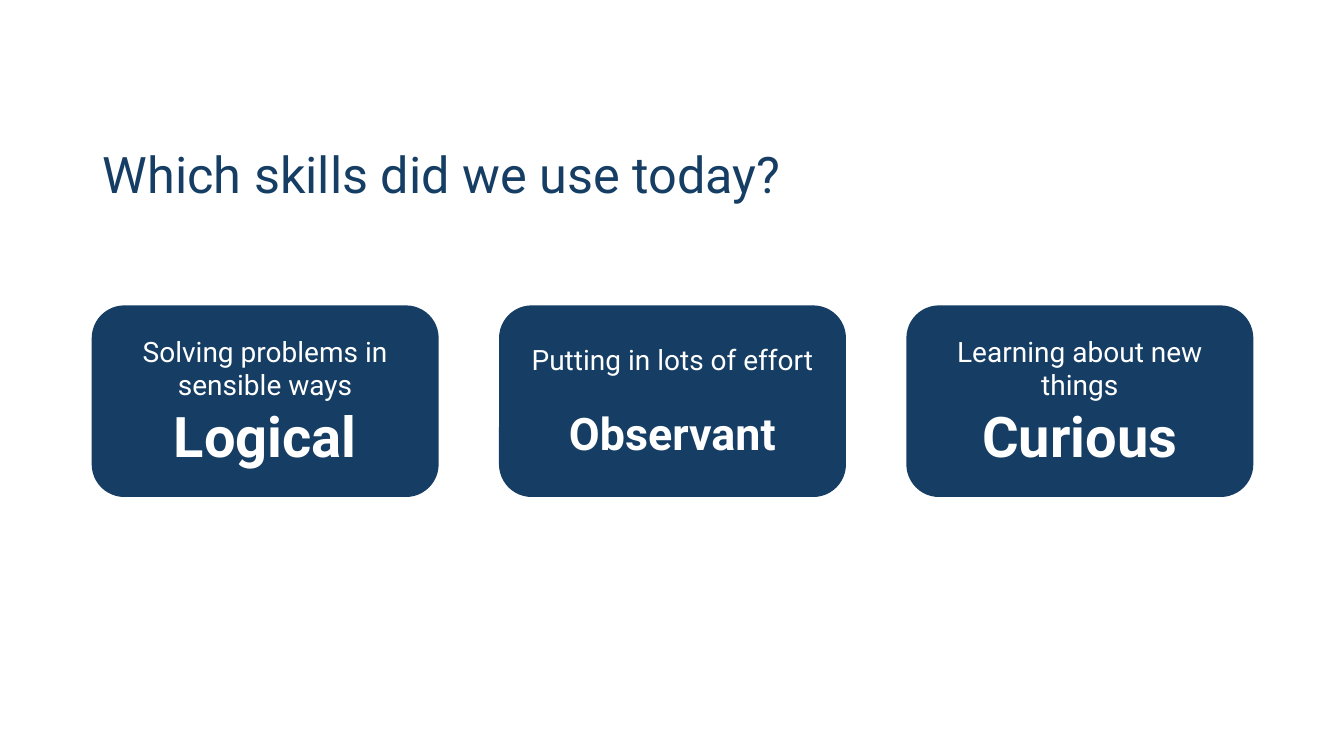
import dataclasses

import pptx
import pptx.dml.color
import pptx.enum.shapes
import pptx.enum.text
import pptx.util
from pptx.enum.text import MSO_ANCHOR, PP_ALIGN
from pptx.util import Inches

NAVY = "163E64"
WHITE = "FFFFFF"
FONT = "Roboto"
LEFT, TOP = 0.92, 3.04
WIDTH, HEIGHT = 3.42, 1.88
PITCH = 4.04


@dataclasses.dataclass
class Skill:
    name: str
    meaning: str
    size: int = 40
    gap: int = 0


SKILLS = [
    Skill("Logical", "Solving problems in sensible ways"),
    Skill("Observant", "Putting in lots of effort", size=32, gap=21),
    Skill("Curious", "Learning about new things"),
]


def color(code: str) -> pptx.dml.color.RGBColor:
    return pptx.dml.color.RGBColor.from_string(code)


def style(para, size: int, code: str, align: PP_ALIGN, bold: bool = False) -> None:
    para.alignment = align
    for run in para.runs:
        run.font.name = FONT
        run.font.size = pptx.util.Pt(size)
        run.font.bold = bold
        run.font.color.rgb = color(code)


def add_title(slide, text: str) -> None:
    title = slide.shapes.title
    title.left, title.top = Inches(LEFT), Inches(1.3)
    title.width, title.height = Inches(11.5), Inches(0.92)
    frame = title.text_frame
    frame.text = text
    frame.vertical_anchor = MSO_ANCHOR.MIDDLE
    para = frame.paragraphs[0]
    para.line_spacing = 0.9
    style(para, 36, NAVY, PP_ALIGN.LEFT)


def add_card(slide, skill: Skill, left: float) -> None:
    card = slide.shapes.add_shape(
        pptx.enum.shapes.MSO_SHAPE.ROUNDED_RECTANGLE,
        Inches(left), Inches(TOP), Inches(WIDTH), Inches(HEIGHT),
    )
    card.shadow.inherit = False
    card.fill.solid()
    card.fill.fore_color.rgb = color(NAVY)
    card.line.color.rgb = color(NAVY)
    card.line.width = pptx.util.Pt(1.5)

    frame = card.text_frame
    frame.word_wrap = True
    frame.vertical_anchor = MSO_ANCHOR.MIDDLE
    frame.text = f"{skill.meaning}\n{skill.name}"
    meaning, name = frame.paragraphs
    style(meaning, 20, WHITE, PP_ALIGN.CENTER)
    style(name, skill.size, WHITE, PP_ALIGN.CENTER, bold=True)
    if skill.gap:
        name.space_before = pptx.util.Pt(skill.gap)


def main() -> None:
    deck = pptx.Presentation()
    deck.slide_width, deck.slide_height = Inches(13.33), Inches(7.5)
    slide = deck.slides.add_slide(deck.slide_layouts[5])
    add_title(slide, "Which skills did we use today?")
    for i, skill in enumerate(SKILLS):
        add_card(slide, skill, LEFT + i * PITCH)
    deck.save("out.pptx")


if __name__ == "__main__":
    main()
